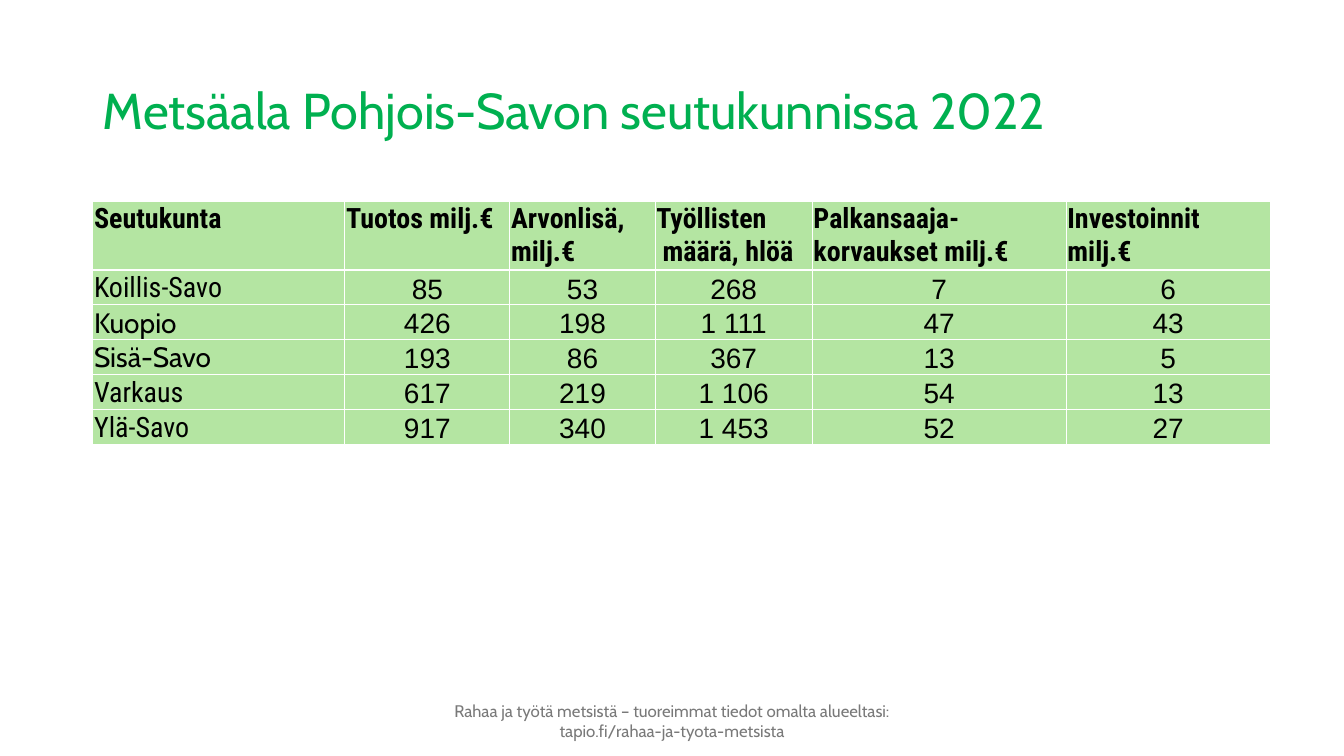
import pptx
import pptx.util
import pptx.dml.color
import pptx.enum.text
from lxml import etree
from pptx.oxml.ns import qn

Cm = pptx.util.Cm
Pt = pptx.util.Pt
RGBColor = pptx.dml.color.RGBColor
ALIGN = pptx.enum.text.PP_ALIGN
ANCHOR = pptx.enum.text.MSO_ANCHOR

# Content
TITLE = "Metsäala Pohjois-Savon seutukunnissa 2022"
FOOTER = ("Rahaa ja työtä metsistä – tuoreimmat tiedot omalta alueeltasi: "
          "tapio.fi/rahaa-ja-tyota-metsista")
HEADINGS = [
    ["Seutukunta"],
    ["Tuotos milj.€"],
    ["Arvonlisä, milj.€"],
    ["Työllisten", "määrä, hlöä"],
    ["Palkansaaja-korvaukset milj.€"],
    ["Investoinnit", "milj.€"],
]
INDENTED_LINE = "määrä, hlöä"
CABIN, CONDENSED, ARIAL = "Cabin", "Roboto Condensed", "Arial"
REGIONS = [
    ("Koillis-Savo", CONDENSED, ["85", "53", "268", "7", "6"]),
    ("Kuopio", CABIN, ["426", "198", "1 111", "47", "43"]),
    ("Sisä-Savo", CABIN, ["193", "86", "367", "13", "5"]),
    ("Varkaus", CONDENSED, ["617", "219", "1 106", "54", "13"]),
    ("Ylä-Savo", CONDENSED, ["917", "340", "1 453", "52", "27"]),
]

# Colours and measures
GREEN = RGBColor(0x00, 0xB0, 0x50)
PALE_GREEN = RGBColor(0xB4, 0xE5, 0xA2)
BLACK = RGBColor(0x00, 0x00, 0x00)
GREY = RGBColor(0x79, 0x79, 0x79)
WHITE = RGBColor(0xFF, 0xFF, 0xFF)
COLUMN_WIDTHS = [6.35, 4.16, 3.66, 3.96, 6.4, 5.14]
HEADER_HEIGHT, ROW_HEIGHT = 1.45, 0.51
LEFT, TABLE_TOP = 2.34, 5.08


def add_span(para, text, font, size, color, bold=False):
    span = para.add_run()
    span.text = text
    span.font.name = font
    span.font.size = Pt(size)
    span.font.color.rgb = color
    span.font.bold = bold


def add_text_box(page, area, text, size, color, align):
    box = page.shapes.add_textbox(*(Cm(length) for length in area))
    frame = box.text_frame
    frame.word_wrap = True
    frame.vertical_anchor = ANCHOR.MIDDLE
    para = frame.paragraphs[0]
    para.alignment = align
    add_span(para, text, CABIN, size, color)
    return para


def add_borders(cell):
    properties = cell._tc.get_or_add_tcPr()
    for position, side in enumerate(("lnL", "lnR", "lnT", "lnB")):
        line = etree.Element(qn("a:" + side), w=str(Pt(1)))
        fill = etree.SubElement(line, qn("a:solidFill"))
        etree.SubElement(fill, qn("a:srgbClr"), val=str(WHITE))
        properties.insert(position, line)


def fill_cell(cell, lines, font, bold=False, number=False):
    cell.fill.solid()
    cell.fill.fore_color.rgb = PALE_GREEN
    add_borders(cell)
    inset = Cm(0 if number else 0.03)
    cell.margin_left = cell.margin_right = cell.margin_top = inset
    cell.margin_bottom = 0
    cell.vertical_anchor = ANCHOR.TOP if bold else ANCHOR.BOTTOM
    frame = cell.text_frame
    for index, line in enumerate(lines):
        para = frame.add_paragraph() if index else frame.paragraphs[0]
        para.alignment = ALIGN.CENTER if number else ALIGN.LEFT
        if line == INDENTED_LINE:
            para._p.get_or_add_pPr().set("marL", str(Cm(0.16)))
        add_span(para, line, font, 20, BLACK, bold)


deck = pptx.Presentation()
deck.slide_width, deck.slide_height = Cm(33.87), Cm(19.05)
page = deck.slides.add_slide(deck.slide_layouts[6])

# Title and footer
title = add_text_box(page, (LEFT, 1.02, 29.21, 3.68), TITLE, 36, GREEN, ALIGN.LEFT)
title.line_spacing = 0.9
add_text_box(page, (10.82, 17.65, 12.24, 1.02), FOOTER, 12, GREY, ALIGN.CENTER)

# Table of regions
table_height = HEADER_HEIGHT + ROW_HEIGHT * len(REGIONS)
table = page.shapes.add_table(
    len(REGIONS) + 1, len(HEADINGS), Cm(LEFT), Cm(TABLE_TOP),
    Cm(sum(COLUMN_WIDTHS)), Cm(table_height)).table
for column, width in zip(table.columns, COLUMN_WIDTHS):
    column.width = Cm(width)
for index, row in enumerate(table.rows):
    row.height = Cm(ROW_HEIGHT if index else HEADER_HEIGHT)

for column, lines in enumerate(HEADINGS):
    fill_cell(table.cell(0, column), lines, CONDENSED, bold=True)
for row, (region, font, values) in enumerate(REGIONS, start=1):
    fill_cell(table.cell(row, 0), [region], font)
    for column, value in enumerate(values, start=1):
        fill_cell(table.cell(row, column), [value], ARIAL, number=True)

deck.save("out.pptx")
